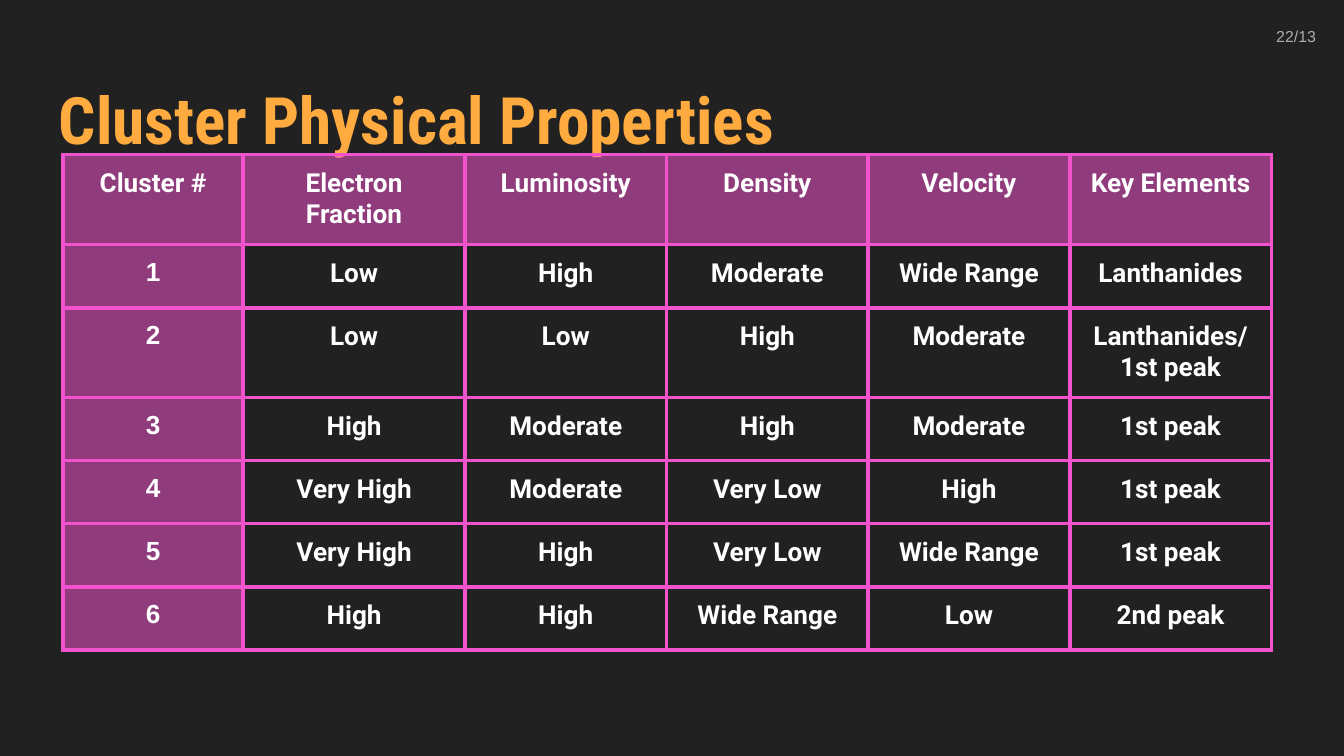
from lxml.etree import SubElement
from pptx import Presentation
from pptx.dml.color import RGBColor
from pptx.enum.text import MSO_ANCHOR, PP_ALIGN
from pptx.oxml.ns import qn
from pptx.util import Inches, Pt

BACKGROUND = RGBColor(0x21, 0x21, 0x21)
GRAY = RGBColor(0xAD, 0xAD, 0xAD)
ORANGE = RGBColor(0xFF, 0xAB, 0x40)
PINK = RGBColor(0xF1, 0x53, 0xCD)
WHITE = RGBColor(0xFF, 0xFF, 0xFF)

INSET = Inches(0.1)
COLUMN_WIDTHS = [1.34, 1.65, 1.5, 1.5, 1.5, 1.5]
ROW_HEIGHTS = [0.67, 0.47, 0.66, 0.47, 0.47, 0.47, 0.47]
ROWS = [
    ["Cluster #", "Electron Fraction", "Luminosity", "Density", "Velocity", "Key Elements"],
    ["1", "Low", "High", "Moderate", "Wide Range", "Lanthanides"],
    ["2", "Low", "Low", "High", "Moderate", "Lanthanides/\n1st peak"],
    ["3", "High", "Moderate", "High", "Moderate", "1st peak"],
    ["4", "Very High", "Moderate", "Very Low", "High", "1st peak"],
    ["5", "Very High", "High", "Very Low", "Wide Range", "1st peak"],
    ["6", "High", "High", "Wide Range", "Low", "2nd peak"],
]


def add_run(paragraph, text, font, size, color, bold=True):
    run = paragraph.add_run()
    run.text = text
    run.font.name = font
    run.font.size = Pt(size)
    run.font.bold = bold
    run.font.color.rgb = color


def add_text_frame(left, top, width, height):
    box = slide.shapes.add_textbox(Inches(left), Inches(top), Inches(width), Inches(height))
    frame = box.text_frame
    frame.word_wrap = True
    frame.margin_left = frame.margin_right = INSET
    frame.margin_top = frame.margin_bottom = INSET
    return frame


presentation = Presentation()
presentation.slide_width = Inches(10)
presentation.slide_height = Inches(10 * 9 / 16)
slide = presentation.slides.add_slide(presentation.slide_layouts[6])
slide.background.fill.solid()
slide.background.fill.fore_color.rgb = BACKGROUND

number_frame = add_text_frame(9.29, 0.12, 0.6, 0.43)
number_frame.margin_bottom = Inches(0.21)
number_frame.vertical_anchor = MSO_ANCHOR.MIDDLE
paragraph = number_frame.paragraphs[0]
paragraph.alignment = PP_ALIGN.RIGHT
paragraph.line_spacing = 0.8
add_run(paragraph, "22/13", "Arial", 8.5, GRAY, False)

title_frame = add_text_frame(0.34, 0.49, 9.32, 0.63)
add_run(title_frame.paragraphs[0], "Cluster Physical Properties", "Roboto Condensed", 35, ORANGE)

table = slide.shapes.add_table(
    len(ROWS), len(COLUMN_WIDTHS), Inches(0.47), Inches(1.15),
    Inches(sum(COLUMN_WIDTHS)), Inches(sum(ROW_HEIGHTS)),
).table
table.first_row = False
table.horz_banding = False
for column, width in zip(table.columns, COLUMN_WIDTHS):
    column.width = Inches(width)
for row, height in zip(table.rows, ROW_HEIGHTS):
    row.height = Inches(height)

for row_index, values in enumerate(ROWS):
    for column_index, value in enumerate(values):
        cell = table.cell(row_index, column_index)
        cell.margin_left = cell.margin_right = INSET
        cell.margin_top = cell.margin_bottom = INSET

        properties = cell._tc.get_or_add_tcPr()
        for side in ("a:lnL", "a:lnR", "a:lnT", "a:lnB"):
            border = SubElement(properties, qn(side), w=str(Pt(2.25)))
            border_fill = SubElement(border, qn("a:solidFill"))
            SubElement(border_fill, qn("a:srgbClr"), val=str(PINK))

        if row_index == 0 or column_index == 0:
            cell.fill.solid()
            cell.fill.fore_color.rgb = PINK
            fill_color = properties.find(qn("a:solidFill")).find(qn("a:srgbClr"))
            SubElement(fill_color, qn("a:alpha"), val="53000")
        else:
            cell.fill.background()

        font = "Arial" if column_index == 0 and row_index > 0 else "Roboto"
        frame = cell.text_frame
        for line_index, line in enumerate(value.split("\n")):
            paragraph = frame.add_paragraph() if line_index else frame.paragraphs[0]
            paragraph.alignment = PP_ALIGN.CENTER
            add_run(paragraph, line, font, 14, WHITE)

presentation.save("out.pptx")
